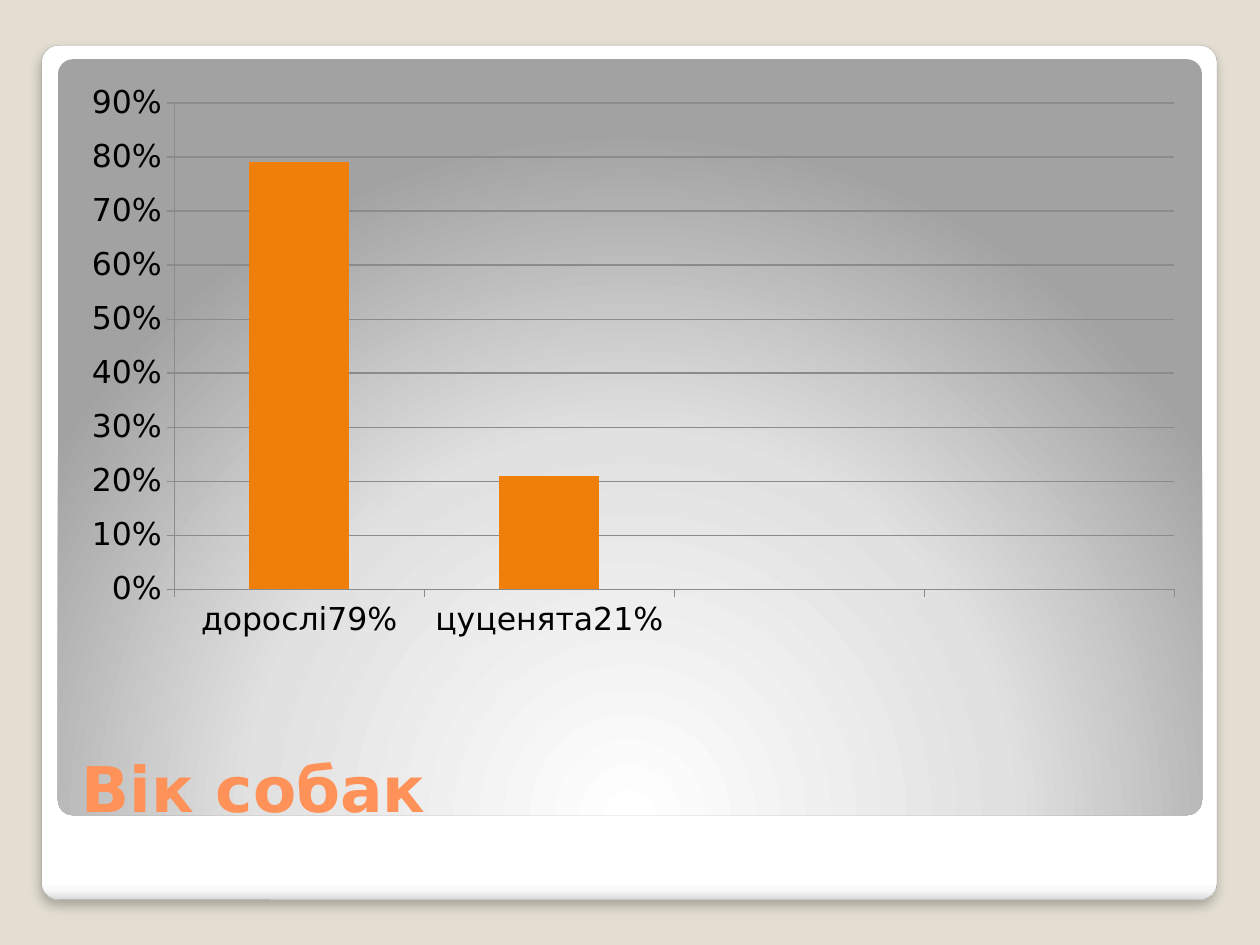
from lxml import etree
from pptx import Presentation, util as u
from pptx.chart.data import CategoryChartData
from pptx.dml.color import RGBColor
from pptx.enum import chart as ch, shapes, text
from pptx.oxml.ns import qn

SAND = RGBColor(0xE3, 0xDE, 0xD1)
GRAY = RGBColor(0xA4, 0xA4, 0xA4)
RULE = RGBColor(0x8B, 0x8B, 0x8B)
CORAL = RGBColor(0xFF, 0x92, 0x58)
ORANGE = RGBColor(0xF0, 0x7F, 0x09)
BLACK = RGBColor(0, 0, 0)
FONT = "DejaVu Sans"

deck = Presentation()
deck.slide_width = u.Inches(10)
deck.slide_height = u.Inches(7.5)
slide = deck.slides.add_slide(deck.slide_layouts[6])
slide.background.fill.solid()
slide.background.fill.fore_color.rgb = SAND
unit = deck.slide_width / 100


def grid(*cells):
    return [round(cell * unit) for cell in cells]


def node(top, tag, **attrs):
    return etree.SubElement(top, qn(tag), {k: str(v) for k, v in attrs.items()})


panels = [
    (grid(3.3, 3.6, 93.3, 67.8),
     [(0, "FFFFFF"), (98, "FFFFFF"), (99, "F7F7F7"), (100, "DADADA")]),
    (grid(4.6, 4.7, 90.8, 60),
     [(0, "FFFFFF"), (55, "E1E1E1"), (100, "A2A2A2")]),
]
cards = []
for box, stops in panels:
    card = slide.shapes.add_shape(shapes.MSO_SHAPE.ROUNDED_RECTANGLE, *box)
    card.adjustments[0] = 0.02
    card.shadow.inherit = False
    card.fill.gradient()
    grad = card._element.spPr.find(qn("a:gradFill"))
    for child in list(grad):
        grad.remove(child)
    ramp = node(grad, "a:gsLst")
    for pos, color in stops:
        stop = node(ramp, "a:gs", pos=pos * 1000)
        node(stop, "a:srgbClr", val=color)
    cards.append((card, grad))

(frame, linear), (panel, radial) = cards
node(linear, "a:lin", ang=90 * 60000, scaled=0)
frame.line.color.rgb = GRAY
frame.line.width = u.Pt(0.16)
effect = frame._element.spPr.find(qn("a:effectLst"))
shade = node(effect, "a:outerShdw", blurRad=u.Pt(6), dist=u.Pt(4),
             dir=90 * 60000, algn="t", rotWithShape=0)
tint = node(shade, "a:srgbClr", val="000000")
node(tint, "a:alpha", val=25000)

glow = node(radial, "a:path", path="circle")
node(glow, "a:fillToRect", l=50000, t=175000, r=50000, b=-75000)
panel.line.fill.background()

title = slide.shapes.add_textbox(*grid(5.5, 54.5, 89.5, 11.5)).text_frame
title.word_wrap = True
title.vertical_anchor = text.MSO_ANCHOR.BOTTOM
line = title.paragraphs[0]
line.text = "Вік собак"
line.font.name = FONT
line.font.size = u.Pt(36)
line.font.bold = True
line.font.color.rgb = CORAL

data = CategoryChartData(number_format="0%")
data.categories = ["дорослі79%", "цуценята21%", "", ""]
data.add_series("Series 1", [0.79, 0.21, None, None])
chart = slide.shapes.add_chart(
    ch.XL_CHART_TYPE.COLUMN_CLUSTERED, *grid(5.5, 5.8, 89.5, 45.8), data).chart
chart.has_legend = False
chart.has_title = False
chart.font.name = FONT
chart.font.size = u.Pt(18)
chart.font.color.rgb = BLACK
plot = chart.plots[0]
plot.gap_width = 150
plot.vary_by_categories = False
bars = plot.series[0].format.fill
bars.solid()
bars.fore_color.rgb = ORANGE

ages, share = chart.category_axis, chart.value_axis
share.minimum_scale = 0
share.maximum_scale = 0.9
share.major_unit = 0.1
share.has_major_gridlines = True
share.tick_labels.number_format = "0%"
share.tick_labels.number_format_is_linked = False
for axis in (ages, share):
    axis.major_tick_mark = ch.XL_TICK_MARK.OUTSIDE
for part in (ages, share, share.major_gridlines):
    part.format.line.color.rgb = RULE
    part.format.line.width = u.Pt(0.75)

deck.save("out.pptx")
